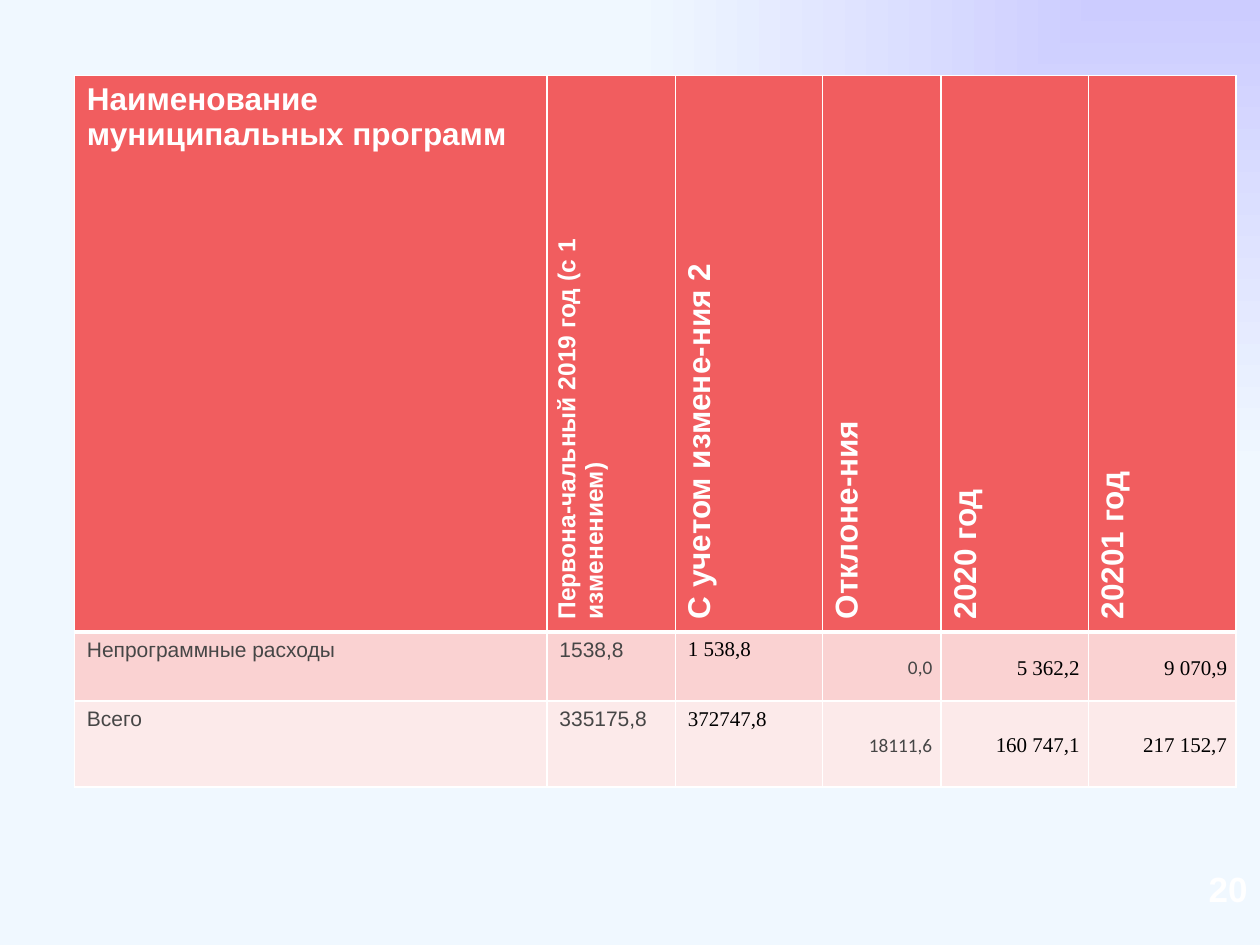
from lxml.etree import SubElement
from pptx import Presentation
from pptx.dml.color import RGBColor
from pptx.enum.text import MSO_ANCHOR, PP_ALIGN
from pptx.oxml.ns import qn
from pptx.util import Inches, Pt


def color(value):
    return RGBColor.from_string(value)


def format_text(paragraph, size, font_name, font_color, bold):
    for run in paragraph.runs:
        run.font.size = Pt(size)
        run.font.name = font_name
        run.font.bold = bold
        run.font.color.rgb = color(font_color)


presentation = Presentation()
presentation.slide_width = Inches(10)
presentation.slide_height = Inches(7.5)
slide = presentation.slides.add_slide(presentation.slide_layouts[6])

background = slide.background.fill
background.gradient()
for stop, stop_color in zip(background.gradient_stops, ["CCCCFF", "F0F8FF"]):
    stop.color.rgb = color(stop_color)
gradient = slide.element.find(".//" + qn("a:gradFill"))
gradient.remove(gradient.find(qn("a:lin")))
gradient_path = SubElement(gradient, qn("a:path"), path="rect")
SubElement(gradient_path, qn("a:fillToRect"), l="100000", b="100000")

rows = [
    ["Наименование муниципальных программ", "Первона-чальный 2019 год (с 1 изменением)",
     "С учетом измене-ния 2", "Отклоне-ния", "2020 год", "20201 год"],
    ["Непрограммные расходы", "1538,8", "1 538,8", "0,0", "5 362,2", "9 070,9"],
    ["Всего", "335175,8", "372747,8", "18111,6", "160 747,1", "217 152,7"],
]
column_widths = [3.75, 1.02, 1.17, 0.94, 1.17, 1.17]
row_heights = [2.03, 0.55, 0.68]
row_fills = ["F15D5F", "FAD2D2", "FCEAEA"]
header_sizes = [18, 14, 18, 18, 18, 18]
body_fonts = [(12, "Arial", "464646")] * 2 + [(12, "Times New Roman", "000000")]
body_fonts += [(11, "Calibri", "464646")] + [(12, "Times New Roman", "000000")] * 2

table = slide.shapes.add_table(
    len(rows), len(column_widths), Inches(0.59), Inches(0.6), Inches(9.21), Inches(3.26)
).table
for column, width in zip(table.columns, column_widths):
    column.width = Inches(width)
for row, height in zip(table.rows, row_heights):
    row.height = Inches(height)

for row_index, texts in enumerate(rows):
    for column_index, text in enumerate(texts):
        cell = table.cell(row_index, column_index)
        cell.text_frame.text = text
        paragraph = cell.text_frame.paragraphs[0]
        properties = cell._tc.get_or_add_tcPr()
        for side in "LRTB":
            thick = (row_index, side) in [(0, "B"), (1, "T")]
            line = SubElement(properties, qn("a:ln" + side), w=str(Pt(3 if thick else 1)))
            line_fill = SubElement(line, qn("a:solidFill"))
            SubElement(line_fill, qn("a:srgbClr"), val="FFFFFF")
        cell.fill.solid()
        cell.fill.fore_color.rgb = color(row_fills[row_index])
        if row_index == 0:
            format_text(paragraph, header_sizes[column_index], "Arial", "FFFFFF", True)
            if column_index > 0:
                properties.set("vert", "vert270")
        else:
            format_text(paragraph, *body_fonts[column_index], False)
            if column_index > 2:
                cell.vertical_anchor = MSO_ANCHOR.MIDDLE
                cell.margin_left = cell.margin_right = Inches(0.07)
                cell.margin_top = cell.margin_bottom = 0
                paragraph.alignment = PP_ALIGN.RIGHT
                paragraph.line_spacing = 1.15

page_number = slide.shapes.add_textbox(Inches(9.2), Inches(6.8), Inches(0.8), Inches(0.5))
page_number.text_frame.word_wrap = True
page_number.text_frame.vertical_anchor = MSO_ANCHOR.MIDDLE
page_number.text_frame.text = "20"
paragraph = page_number.text_frame.paragraphs[0]
paragraph.alignment = PP_ALIGN.RIGHT
format_text(paragraph, 20, "Arial", "FFFFFF", True)

presentation.save("out.pptx")
